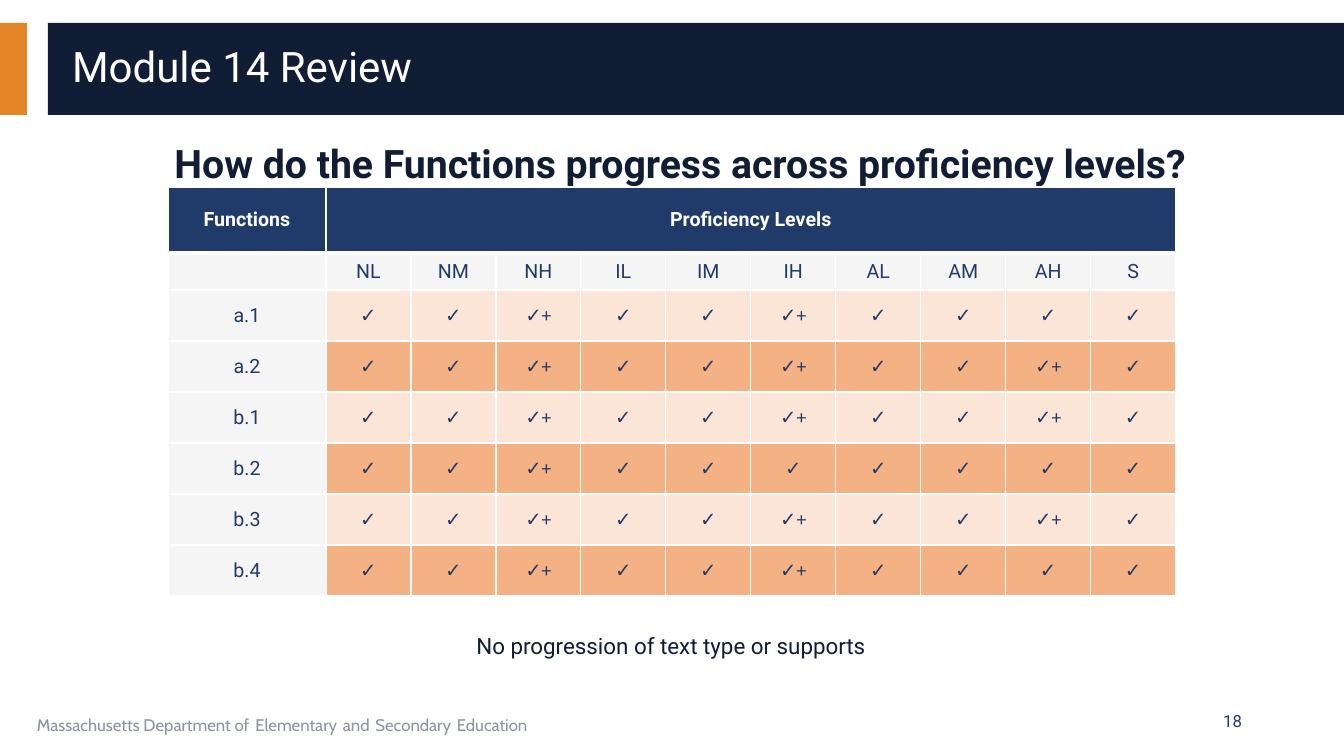
import lxml.etree
import pptx
import pptx.dml.color
import pptx.enum.shapes
import pptx.enum.text
import pptx.oxml.ns
import pptx.util

PX = 9071  # EMU in one px
COLORS = {
    "white": "FFFFFF", "navy": "101D35", "blue": "203B6A", "orange": "E38526",
    "gray": "F5F5F5", "muted": "8D92A1", "peach": "FBE5D6", "apricot": "F4B183",
}
ALIGN = pptx.enum.text.PP_ALIGN
MIDDLE = pptx.enum.text.MSO_ANCHOR.MIDDLE
TOP = pptx.enum.text.MSO_ANCHOR.TOP
LEVELS = ["NL", "NM", "NH", "IL", "IM", "IH", "AL", "AM", "AH", "S"]
PLUS_LEVELS = {
    "a.1": ["NH", "IH"],
    "a.2": ["NH", "IH", "AH"],
    "b.1": ["NH", "IH", "AH"],
    "b.2": ["NH"],
    "b.3": ["NH", "IH", "AH"],
    "b.4": ["NH", "IH"],
}


def rgb(name):
    return pptx.dml.color.RGBColor.from_string(COLORS[name])


def set_all(obj, values):
    for name, value in values.items():
        setattr(obj, name, value)


def px_box(box):
    return [n * PX for n in box]


def add_run(p, text, size, color, font="Roboto", bold=False):
    r = p.add_run()
    r.text = text
    set_all(r.font, {"size": pptx.util.Pt(size), "name": font, "bold": bold})
    r.font.color.rgb = rgb(color)


def prepare_text(sp, anchor, **paragraph_format):
    """Set up the frame of a text shape and return its first paragraph."""
    tf = sp.text_frame
    set_all(tf, {"word_wrap": True, "vertical_anchor": anchor,
                 "auto_size": pptx.enum.text.MSO_AUTO_SIZE.NONE})
    p = tf.paragraphs[0]
    set_all(p, {"space_before": pptx.util.Pt(0), **paragraph_format})
    return p


def place(sp, box):
    set_all(sp, dict(zip(("left", "top", "width", "height"), px_box(box))))


def add_bar(s, box, color):
    """Add a plain bar behind everything else."""
    sp = s.shapes.add_shape(pptx.enum.shapes.MSO_SHAPE.RECTANGLE, *px_box(box))
    sp.shadow.inherit = False
    sp.fill.solid()
    sp.fill.fore_color.rgb = rgb(color)
    sp.line.fill.background()
    s.shapes._spTree.insert(2, sp._element)


def add_header(s, box):
    left, top, width, height = box
    add_bar(s, (left, top, 27, height), "orange")
    add_bar(s, (left + 48, top, width - 48, height), "navy")
    title = s.shapes.title
    place(title, (left + 62, top + 16, width - 90, height - 32))
    p = prepare_text(title, MIDDLE, alignment=ALIGN.LEFT, line_spacing=0.9)
    add_run(p, "Module 14 Review", 30, "white")


def add_question(s, box):
    body = s.placeholders[1]
    place(body, box)
    p = prepare_text(body, TOP, alignment=ALIGN.CENTER, line_spacing=0.9)
    pPr = p._p.get_or_add_pPr()
    pPr.set("marL", "0")
    pPr.set("indent", "0")
    lxml.etree.SubElement(pPr, pptx.oxml.ns.qn("a:buNone"))
    add_run(p, "How do the Functions progress across proficiency levels?",
            28, "navy", bold=True)


def add_note(s, box):
    sp = s.shapes.add_textbox(*px_box(box))
    p = prepare_text(sp, TOP, alignment=ALIGN.CENTER, line_spacing=0.9)
    add_run(p, "No progression of text type or supports", 16, "navy")


def add_footer(s, box):
    left, top, width, height = box
    sp = s.shapes.add_textbox(*px_box((left, top, 851, height)))
    p = prepare_text(sp, MIDDLE)
    add_run(p, "Massachusetts Department of", 12, "muted", "Cabin")
    for word in ("Elementary", "and", "Secondary", "Education"):
        add_run(p, " ", 18, "blue", "Cabin")
        add_run(p, word, 12, "muted", "Cabin")
    number = s.shapes.add_textbox(*px_box((left + width - 302, top, 302, height)))
    p = prepare_text(number, MIDDLE, alignment=ALIGN.RIGHT)
    add_run(p, "18", 12, "blue")


def set_borders(cell, bottom, top):
    """Draw white borders, 1 pt at the sides; bottom and top are in points."""
    tcPr = cell._tc.get_or_add_tcPr()
    for side, points in (("L", 1), ("R", 1), ("T", top), ("B", bottom)):
        ln = lxml.etree.SubElement(tcPr, pptx.oxml.ns.qn(f"a:ln{side}"),
                                   w=str(pptx.util.Pt(points)))
        fill = lxml.etree.SubElement(ln, pptx.oxml.ns.qn("a:solidFill"))
        lxml.etree.SubElement(fill, pptx.oxml.ns.qn("a:srgbClr"), val=COLORS["white"])


def cell_fill(row, col):
    if row == 0:
        return "blue"
    if row == 1 or col == 0:
        return "gray"
    return "apricot" if row % 2 else "peach"


def add_levels_table(s, box):
    rows = [["Functions", "Proficiency Levels"] + [""] * (len(LEVELS) - 1), [""] + LEVELS]
    for function, plus in PLUS_LEVELS.items():
        rows.append([function] + ["✓+" if level in plus else "✓" for level in LEVELS])

    frame = s.shapes.add_table(len(rows), len(rows[0]), *px_box(box))
    table = frame.table
    set_all(table, {"first_row": False, "horz_banding": False})
    for i, column in enumerate(table.columns):
        column.width = (85 if i else 158) * PX
    for i, row in enumerate(table.rows):
        row.height = {0: 66, 1: 37}.get(i, 51) * PX

    for i, texts in enumerate(rows):
        for j, text in enumerate(texts):
            cell = table.cell(i, j)
            set_borders(cell, bottom=1 if i else 3, top=3 if i == 1 else 1)
            cell.fill.solid()
            cell.fill.fore_color.rgb = rgb(cell_fill(i, j))
            set_all(cell, {"vertical_anchor": MIDDLE,
                           "margin_top": 2 * PX, "margin_bottom": 2 * PX})
            p = cell.text_frame.paragraphs[0]
            p.alignment = ALIGN.CENTER
            if text:
                add_run(p, text, 14, "blue" if i else "white",
                        "Calibri" if "✓" in text else "Roboto", bold=i == 0)
    table.cell(0, 1).merge(table.cell(0, len(LEVELS)))


def main():
    prs = pptx.Presentation()
    set_all(prs, {"slide_width": 1344 * PX, "slide_height": 756 * PX})
    s = prs.slides.add_slide(prs.slide_layouts[1])
    add_header(s, (0, 23, 1344, 92))
    add_question(s, (45, 140, 1270, 50))
    add_note(s, (241, 630, 860, 54))
    add_levels_table(s, (168, 187, 1008, 409))
    add_footer(s, (27, 701, 1225, 40))
    prs.save("out.pptx")


if __name__ == "__main__":
    main()
